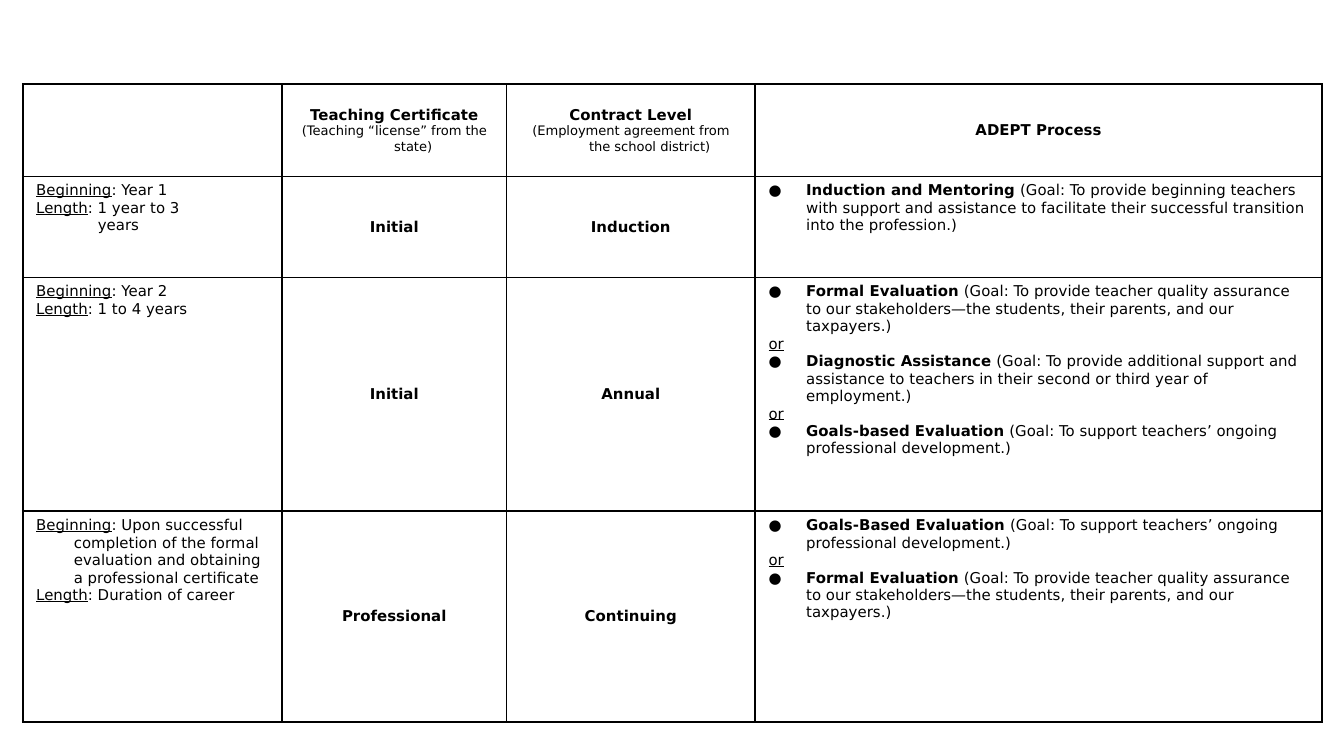
from lxml import etree
from pptx import Presentation
from pptx.dml.color import RGBColor
from pptx.enum.text import MSO_ANCHOR, PP_ALIGN
from pptx.oxml.ns import qn
from pptx.util import Pt

CENTER = PP_ALIGN.CENTER
LEFT = PP_ALIGN.LEFT
MIDDLE = MSO_ANCHOR.MIDDLE
TOP = MSO_ANCHOR.TOP

COLORS = {"ink": "000000", "paper": "FFFFFF"}
FONT = "DejaVu Sans"
HANG = 20.16
YEARS_INDENT = 33
COLUMN_WIDTHS = [139, 120.2, 133.2, 303.8]
ROW_HEIGHTS = [49.6, 54, 125.3, 113]

QUALITY = "(Goal: To provide teacher quality assurance to our stakeholders—the students, their parents, and our taxpayers.)"
ONGOING = "(Goal: To support teachers’ ongoing professional development.)"
OR = ("plain", [("or", "underline")])


def heading(title, note=""):
    lines = [("plain", [(title, "bold")])]
    if note:
        lines.append(("plain", [(note, "small")]))
    return lines


def labelled(kind, label, style, rest):
    return (kind, [(label, style), (rest, "regular")])


rows = [
    [
        [],
        heading("Teaching Certificate", "(Teaching “license” from the state)"),
        heading("Contract Level", "(Employment agreement from the school district)"),
        heading("ADEPT Process"),
    ],
    [
        [
            labelled("plain", "Beginning", "underline", ": Year 1"),
            labelled("plain", "Length", "underline", ": 1 year to 3"),
            ("indented", [("years", "regular")]),
        ],
        heading("Initial"),
        heading("Induction"),
        [labelled("bullet", "Induction and Mentoring", "bold",
                  " (Goal: To provide beginning teachers with support and assistance "
                  "to facilitate their successful transition into the profession.)")],
    ],
    [
        [
            labelled("plain", "Beginning", "underline", ": Year 2"),
            labelled("plain", "Length", "underline", ": 1 to 4 years"),
        ],
        heading("Initial"),
        heading("Annual"),
        [
            labelled("bullet", "Formal Evaluation", "bold", " " + QUALITY),
            OR,
            labelled("bullet", "Diagnostic Assistance", "bold",
                     " (Goal: To provide additional support and assistance to teachers "
                     "in their second or third year of employment.)"),
            OR,
            labelled("bullet", "Goals-based Evaluation", "bold", " " + ONGOING),
        ],
    ],
    [
        [
            labelled("plain", "Beginning", "underline",
                     ": Upon successful completion of the formal evaluation "
                     "and obtaining a professional certificate"),
            labelled("plain", "Length", "underline", ": Duration of career"),
        ],
        heading("Professional"),
        heading("Continuing"),
        [
            labelled("bullet", "Goals-Based Evaluation", "bold", " " + ONGOING),
            OR,
            labelled("bullet", "Formal Evaluation", "bold", " " + QUALITY),
        ],
    ],
]

deck = Presentation()
deck.slide_width = Pt(720)
deck.slide_height = Pt(405)
page = deck.slides.add_slide(deck.slide_layouts[6])
page.background.fill.solid()
page.background.fill.fore_color.rgb = RGBColor.from_string(COLORS["paper"])

frame = page.shapes.add_table(len(ROW_HEIGHTS), len(COLUMN_WIDTHS), Pt(12.2), Pt(45),
                              Pt(sum(COLUMN_WIDTHS)), Pt(sum(ROW_HEIGHTS)))
table = frame.table
table.first_row = False
table.horz_banding = False
for column, width in zip(table.columns, COLUMN_WIDTHS):
    column.width = Pt(width)
for row, height in zip(table.rows, ROW_HEIGHTS):
    row.height = Pt(height)

for row_index, row in enumerate(rows):
    for column_index, lines in enumerate(row):
        cell = table.cell(row_index, column_index)
        centered = row_index == 0 or column_index in (1, 2)
        cell.vertical_anchor = MIDDLE if centered else TOP
        cell.margin_left = cell.margin_right = Pt(7.2)
        cell.margin_top = cell.margin_bottom = Pt(3)

        properties = cell._tc.get_or_add_tcPr()
        for side in ("a:lnL", "a:lnR", "a:lnT", "a:lnB"):
            border = etree.SubElement(properties, qn(side), w=str(Pt(1)))
            solid = etree.SubElement(border, qn("a:solidFill"))
            etree.SubElement(solid, qn("a:srgbClr"), val=COLORS["ink"])
        cell.fill.background()

        for line_index, (kind, spans) in enumerate(lines):
            text = cell.text_frame
            para = text.paragraphs[0] if line_index == 0 else text.add_paragraph()
            para.alignment = CENTER if centered else LEFT
            settings = para._p.get_or_add_pPr()
            indented = kind == "indented"
            settings.set("marL", str(Pt(YEARS_INDENT if indented else HANG)))
            settings.set("indent", str(Pt(0 if indented else -HANG)))
            if kind == "bullet":
                bullet_color = etree.SubElement(settings, qn("a:buClr"))
                etree.SubElement(bullet_color, qn("a:srgbClr"), val=COLORS["ink"])
                etree.SubElement(settings, qn("a:buFont"), typeface=FONT)
                etree.SubElement(settings, qn("a:buChar"), char="●")
            for words, style in spans:
                span = para.add_run()
                span.text = words
                span.font.name = FONT
                span.font.size = Pt(7 if style == "small" else 8)
                span.font.bold = style == "bold"
                span.font.underline = style == "underline"
                span.font.color.rgb = RGBColor.from_string(COLORS["ink"])

deck.save("out.pptx")
